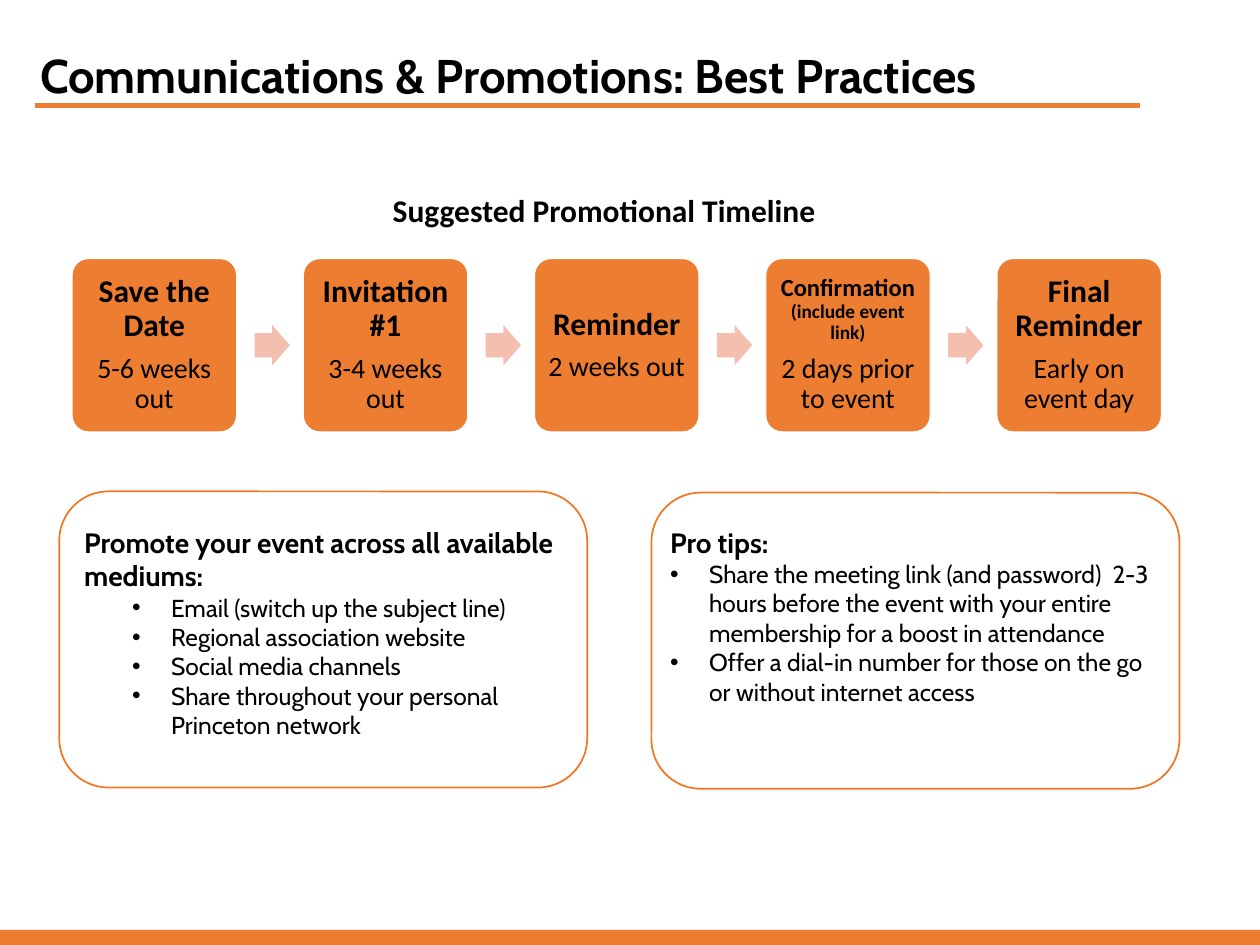
"""Build the slide on communication and promotion best practices."""
import pptx
import pptx.dml.color
import pptx.enum.shapes
import pptx.enum.text
import pptx.oxml.ns
import pptx.util
from lxml import etree

Inches = pptx.util.Inches
Pt = pptx.util.Pt
SHAPE = pptx.enum.shapes.MSO_SHAPE
ALIGN = pptx.enum.text.PP_ALIGN
ANCHOR = pptx.enum.text.MSO_ANCHOR
qn = pptx.oxml.ns.qn

COLORS = {
    "orange": "ED7D31",
    "outline": "F07723",
    "arrow": "F4BFAE",
    "white": "FFFFFF",
    "black": "000000",
}

TITLE = "Communications & Promotions: Best Practices"
TIMELINE_TITLE = "Suggested Promotional Timeline"
STEPS = [
    ([("Save the Date", 18)], "5-6 weeks out"),
    ([("Invitation #1", 18)], "3-4 weeks out"),
    ([("Reminder", 18)], "2 weeks out"),
    ([("Confirmation ", 14), ("(include event link)", 11)], "2 days prior to event"),
    ([("Final Reminder", 18)], "Early on event day"),
]
PANELS = [
    {
        "text_at": (0.57, 4.12, 4, 1.82),
        "frame_at": (0.47, 3.9, 4.19, 2.35),
        "indent": 0.69,
        "heading": "Promote your event across all available mediums:",
        "bullets": [
            "Email (switch up the subject line)",
            "Regional association website",
            "Social media channels",
            "Share throughout your personal Princeton network",
        ],
    },
    {
        "text_at": (5.22, 4.12, 4.11, 2.3),
        "frame_at": (5.17, 3.91, 4.19, 2.35),
        "indent": 0.31,
        "heading": "Pro tips:",
        "bullets": [
            "Share the meeting link (and password)  2-3 hours before the event "
            "with your entire membership for a boost in attendance",
            "Offer a dial-in number for those on the go or without internet access",
        ],
    },
]

STEP_LEFT, STEP_TOP, STEP_WIDTH, STEP_HEIGHT = 0.57, 2.05, 1.31, 1.38
STEP_PITCH = 1.835
STEP_INSET = 0.04
ARROW_OFFSET, ARROW_WIDTH, ARROW_HEIGHT = 1.45, 0.28, 0.32
BULLET_HANG = 0.31


def color(name):
    return pptx.dml.color.RGBColor.from_string(COLORS[name])


def place(at):
    return [Inches(value) for value in at]


def add_box(slide, at, margins=(0.1, 0.05), anchor=ANCHOR.TOP):
    frame = slide.shapes.add_textbox(*place(at)).text_frame
    frame.word_wrap = True
    frame.vertical_anchor = anchor
    frame.margin_left = frame.margin_right = Inches(margins[0])
    frame.margin_top = frame.margin_bottom = Inches(margins[1])
    return frame


def add_text(frame, spans, font="Calibri", bold=False, align=ALIGN.LEFT,
             line_spacing=None, space_after=0, bullet_indent=None):
    first = frame.paragraphs[0]
    para = frame.add_paragraph() if first.runs else first
    para.alignment = align
    para.space_after = Pt(space_after)
    if line_spacing:
        para.line_spacing = line_spacing
    if bullet_indent is not None:
        properties = para._p.get_or_add_pPr()
        properties.set("marL", str(Inches(bullet_indent)))
        properties.set("indent", str(-Inches(BULLET_HANG)))
        etree.SubElement(properties, qn("a:buFont")).set("typeface", "Arial")
        etree.SubElement(properties, qn("a:buChar")).set("char", "•")
    for text, size in spans:
        span = para.add_run()
        span.text = text
        span.font.name = font
        span.font.size = Pt(size)
        span.font.bold = bold
        span.font.color.rgb = color("black")


def add_shape(slide, kind, at, fill=None, line=None, adjustments=()):
    shape = slide.shapes.add_shape(kind, *place(at))
    shape.shadow.inherit = False
    for index, value in enumerate(adjustments):
        shape.adjustments[index] = value
    if fill:
        shape.fill.solid()
        shape.fill.fore_color.rgb = color(fill)
    else:
        shape.fill.background()
    if line:
        shape.line.color.rgb = color(line)
        shape.line.width = Pt(1)
    else:
        shape.line.fill.background()


def add_header(slide):
    add_shape(slide, SHAPE.RECTANGLE, (0, 7.38, 10, 0.12), fill="orange")
    title = add_box(slide, (0.22, 0.15, 8.7, 0.94), anchor=ANCHOR.MIDDLE)
    add_text(title, [(TITLE, 27)], font="Cabin", bold=True, line_spacing=0.9)
    rule = slide.shapes.add_connector(
        pptx.enum.shapes.MSO_CONNECTOR.STRAIGHT, *place((0.28, 0.84, 9.05, 0.84)))
    rule.line.color.rgb = color("orange")
    rule.line.width = Pt(3)
    etree.SubElement(rule._element.spPr, qn("a:effectLst"))


def add_timeline(slide):
    heading = add_box(slide, (2.85, 1.47, 3.89, 0.4))
    add_text(heading, [(TIMELINE_TITLE, 18)], bold=True, align=ALIGN.CENTER)
    arrow_top = STEP_TOP + (STEP_HEIGHT - ARROW_HEIGHT) / 2
    for index, (name, timing) in enumerate(STEPS):
        left = STEP_LEFT + index * STEP_PITCH
        add_shape(slide, SHAPE.ROUNDED_RECTANGLE,
                  (left, STEP_TOP, STEP_WIDTH, STEP_HEIGHT),
                  fill="orange", line="white", adjustments=[0.1])
        box = add_box(slide, (left + STEP_INSET, STEP_TOP + STEP_INSET,
                              STEP_WIDTH - 2 * STEP_INSET, STEP_HEIGHT - 2 * STEP_INSET),
                      margins=(0.07, 0.07), anchor=ANCHOR.MIDDLE)
        layout = {"align": ALIGN.CENTER, "line_spacing": 0.9, "space_after": 6}
        add_text(box, name, bold=True, **layout)
        add_text(box, [(timing, 16)], **layout)
        if index < len(STEPS) - 1:
            add_shape(slide, SHAPE.RIGHT_ARROW,
                      (left + ARROW_OFFSET, arrow_top, ARROW_WIDTH, ARROW_HEIGHT),
                      fill="arrow", adjustments=[0.6, 0.5])


def add_panel(slide, panel):
    box = add_box(slide, panel["text_at"])
    add_text(box, [(panel["heading"], 16)], font="Cabin", bold=True)
    for bullet in panel["bullets"]:
        add_text(box, [(bullet, 14)], font="Cabin", bullet_indent=panel["indent"])
    add_shape(slide, SHAPE.ROUNDED_RECTANGLE, panel["frame_at"], line="outline")


def main():
    deck = pptx.Presentation()
    deck.slide_width, deck.slide_height = Inches(10), Inches(7.5)
    page = deck.slides.add_slide(deck.slide_layouts[6])
    add_header(page)
    add_timeline(page)
    for panel in PANELS:
        add_panel(page, panel)
    deck.save("out.pptx")


if __name__ == "__main__":
    main()
